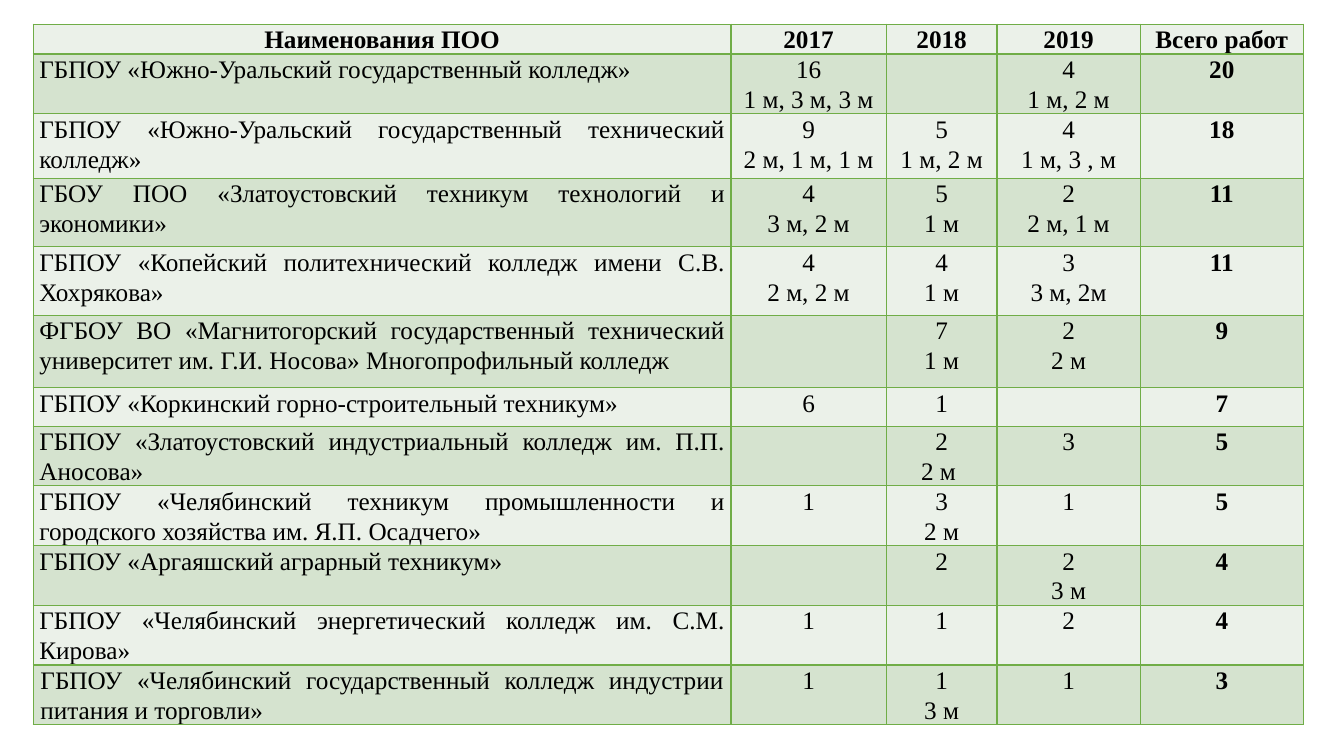
from dataclasses import dataclass

from lxml import etree
from pptx import Presentation
from pptx.dml.color import RGBColor
from pptx.enum.text import MSO_ANCHOR, PP_ALIGN
from pptx.oxml.ns import qn
from pptx.util import Inches, Pt

CENTER, JUSTIFY = PP_ALIGN.CENTER, PP_ALIGN.JUSTIFY
TOP = MSO_ANCHOR.TOP
BLANK_LAYOUT = 6


@dataclass(frozen=True)
class Theme:
    font: str = "Times New Roman"
    size: float = 18
    spacing: float = 1.07
    text: str = "000000"
    border: str = "70AD47"
    border_width: float = 1
    bands: tuple = ("EBF1E9", "D5E3CF")


class Deck:
    """Places elements on a grid of 100 columns by 100 rows."""

    def __init__(self, theme):
        self.theme = theme
        self.prs = Presentation()
        self.prs.slide_width, self.prs.slide_height = Inches(13.33), Inches(7.5)
        self.slide = None

    def add_slide(self):
        self.slide = self.prs.slides.add_slide(self.prs.slide_layouts[BLANK_LAYOUT])

    def x(self, cols):
        return round(self.prs.slide_width * cols / 100)

    def y(self, rows):
        return round(self.prs.slide_height * rows / 100)

    def table(self, left, top, widths, heights, data, pads):
        frame = self.slide.shapes.add_table(
            len(heights), len(widths), self.x(left), self.y(top),
            self.x(sum(widths)), self.y(sum(heights)))
        tbl = frame.table
        tbl.first_row = tbl.horz_banding = False
        for col, width in zip(tbl.columns, widths):
            col.width = self.x(width)
        last = len(widths) - 1
        for i, (row, height, values, pad) in enumerate(zip(tbl.rows, heights, data, pads)):
            row.height = self.y(height)
            for j, (cell, value) in enumerate(zip(row.cells, values)):
                cell.margin_left = cell.margin_right = self.x(pad)
                cell.margin_top = cell.margin_bottom = 0
                cell.vertical_anchor = TOP
                self.borders(cell)
                cell.fill.solid()
                cell.fill.fore_color.rgb = RGBColor.from_string(self.theme.bands[i % 2])
                align = JUSTIFY if i and j == 0 else CENTER
                self.text(cell.text_frame, value, align, bold=i == 0 or j == last)

    def borders(self, cell):
        tc_pr = cell._tc.get_or_add_tcPr()
        for side in ("a:lnL", "a:lnR", "a:lnT", "a:lnB"):
            ln = etree.SubElement(tc_pr, qn(side), w=str(Pt(self.theme.border_width)))
            fill = etree.SubElement(ln, qn("a:solidFill"))
            etree.SubElement(fill, qn("a:srgbClr"), val=self.theme.border)

    def text(self, tf, value, align, bold):
        for n, line in enumerate(value.split("\n")):
            p = tf.add_paragraph() if n else tf.paragraphs[0]
            p.alignment, p.line_spacing = align, self.theme.spacing
            if not line:
                p.font.size = Pt(self.theme.size)
                continue
            r = p.add_run()
            r.text = line
            r.font.name, r.font.size = self.theme.font, Pt(self.theme.size)
            r.font.bold = bold
            r.font.color.rgb = RGBColor.from_string(self.theme.text)


# Table content: college, works and places by year, total
RESULTS = [
    ("Наименования ПОО", "2017", "2018", "2019", "Всего работ"),
    ("ГБПОУ «Южно-Уральский государственный колледж»",
     "16\n1 м, 3 м, 3 м", "", "4\n1 м, 2 м", "20"),
    ("ГБПОУ «Южно-Уральский государственный технический колледж»",
     "9\n2 м, 1 м, 1 м", "5\n1 м, 2 м", "4\n1 м, 3 , м", "18"),
    ("ГБОУ ПОО «Златоустовский техникум технологий и экономики»",
     "4\n3 м, 2 м", "5\n1 м", "2\n2 м, 1 м", "11"),
    ("ГБПОУ «Копейский политехнический колледж имени С.В. Хохрякова»",
     "4\n2 м, 2 м", "4\n1 м", "3\n3 м, 2м", "11"),
    ("ФГБОУ ВО «Магнитогорский государственный технический университет "
     "им. Г.И. Носова» Многопрофильный колледж",
     "", "7\n1 м", "2\n2 м", "9"),
    ("ГБПОУ «Коркинский горно-строительный техникум»", "6", "1", "", "7"),
    ("ГБПОУ «Златоустовский индустриальный колледж им. П.П. Аносова»",
     "", "2\n2 м ", "3", "5"),
    ("ГБПОУ «Челябинский техникум промышленности и городского хозяйства "
     "им. Я.П. Осадчего»",
     "1", "3\n2 м", "1", "5"),
    ("ГБПОУ «Аргаяшский аграрный техникум»", "", "2", "2\n3 м", "4"),
    ("ГБПОУ «Челябинский энергетический колледж им. С.М. Кирова»",
     "1", "1", "2", "4"),
    ("ГБПОУ «Челябинский государственный колледж индустрии питания и торговли»",
     "1", "1\n3 м", "1", "3"),
]

# Grid sizes of the table
TWO_LINES = 7.87
COL_WIDTHS = [51.91, 11.55, 8.25, 10.65, 12.15]
ROW_HEIGHTS = [3.9, TWO_LINES, 8.53, 9.07, 9.07, 9.6, 5.07] + [TWO_LINES] * 5
SIDE_PADS = [0.45] * 11 + [0.53]


def main():
    deck = Deck(Theme())
    deck.add_slide()
    deck.table(2.48, 3.2, COL_WIDTHS, ROW_HEIGHTS, RESULTS, SIDE_PADS)
    deck.prs.save("out.pptx")


if __name__ == "__main__":
    main()
